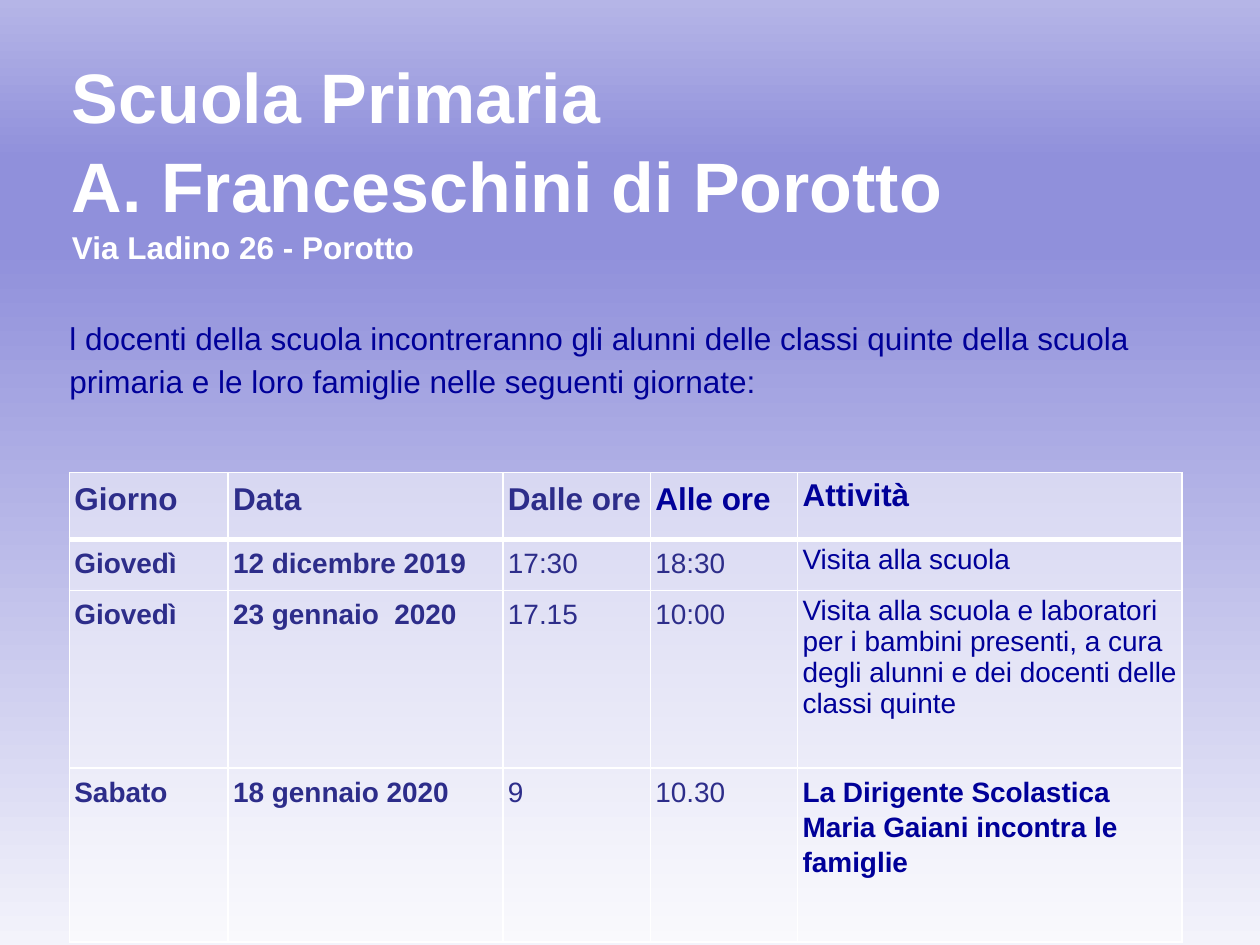
import pptx
import pptx.dml.color
import pptx.enum.text
import pptx.oxml
import pptx.oxml.ns
import pptx.util
from pptx.util import Cm

WHITE = pptx.dml.color.RGBColor(0xFF, 0xFF, 0xFF)
BLUE = pptx.dml.color.RGBColor(0x00, 0x00, 0x99)
INDIGO = pptx.dml.color.RGBColor(0x2D, 0x2D, 0x8A)
LAVENDER = pptx.dml.color.RGBColor(0x90, 0x90, 0xDB)
LILAC = pptx.dml.color.RGBColor(0xB5, 0xB5, 0xE7)
PALE = pptx.dml.color.RGBColor(0xF3, 0xF3, 0xFB)

FONT = "Arial"
NAMESPACE = pptx.oxml.ns.nsdecls("a")
BACKGROUND_STOPS = [(0, PALE), (74, LAVENDER), (83, LAVENDER), (100, LILAC)]

COLUMN_WIDTHS = [3.2, 5.54, 2.97, 2.97, 7.75]
ROW_HEIGHTS = [1.35, 1.02, 3.58, 3.51]
SCHEDULE = [
    ["Giorno", "Data", "Dalle ore", "Alle ore", "Attività"],
    ["Giovedì", "12 dicembre 2019", "17:30", "18:30", "Visita alla scuola"],
    ["Giovedì", "23 gennaio  2020", "17.15", "10:00",
     "Visita alla scuola e laboratori per i bambini presenti, a cura degli "
     "alunni e dei docenti delle classi quinte"],
    ["Sabato", "18 gennaio 2020", "9", "10.30",
     "La Dirigente Scolastica Maria Gaiani incontra le famiglie"],
]


def set_background(slide):
    """Fill the slide with a gradient that runs from bottom to top."""
    fill = slide.background.fill
    fill.gradient()
    fill.gradient_angle = 90
    stop_list = fill._fill._gradFill.find(pptx.oxml.ns.qn("a:gsLst"))
    for stop in list(stop_list):
        stop_list.remove(stop)
    for percent, color in BACKGROUND_STOPS:
        stop_list.append(pptx.oxml.parse_xml(
            f'<a:gs {NAMESPACE} pos="{percent * 1000}">'
            f'<a:srgbClr val="{color}"/></a:gs>'))


def write_text(paragraph, text, size=18, color=WHITE, bold=False,
               line_spacing=None, space_after=None):
    """Append text to a paragraph; each newline becomes a line break."""
    for index, line in enumerate(text.split("\n")):
        if index:
            paragraph.add_line_break()
        if line:
            run = paragraph.add_run()
            run.text = line
            run.font.name = FONT
            run.font.size = pptx.util.Pt(size)
            run.font.bold = bold
            run.font.color.rgb = color
    if line_spacing is not None:
        paragraph.line_spacing = line_spacing
    if space_after is not None:
        paragraph.space_after = pptx.util.Pt(space_after)


def add_text_box(slide, left, top, width, height):
    """Add a wrapping, vertically centred box and return its text frame."""
    shape = slide.shapes.add_textbox(Cm(left), Cm(top), Cm(width), Cm(height))
    frame = shape.text_frame
    frame.word_wrap = True
    frame.vertical_anchor = pptx.enum.text.MSO_ANCHOR.MIDDLE
    return frame


def style_cell(cell, top_border, bottom_border):
    """Give a cell small margins, a half-transparent fill and white borders."""
    cell.margin_left = cell.margin_right = Cm(0.1)
    cell.margin_top = cell.margin_bottom = Cm(0.1)
    cell.fill.solid()
    cell.fill.fore_color.rgb = WHITE
    properties = cell._tc.get_or_add_tcPr()
    fill_color = next(properties.iter(pptx.oxml.ns.qn("a:srgbClr")))
    fill_color.append(
        pptx.oxml.parse_xml(f'<a:alpha {NAMESPACE} val="50000"/>'))
    borders = [("L", 1), ("R", 1), ("T", top_border), ("B", bottom_border)]
    for index, (side, width) in enumerate(borders):
        properties.insert(index, pptx.oxml.parse_xml(
            f'<a:ln{side} {NAMESPACE} w="{pptx.util.Pt(width)}"><a:solidFill>'
            f'<a:srgbClr val="{WHITE}"/></a:solidFill></a:ln{side}>'))


def add_schedule(slide, left, top):
    """Add the table of meetings."""
    table = slide.shapes.add_table(
        len(ROW_HEIGHTS), len(COLUMN_WIDTHS), Cm(left), Cm(top),
        Cm(sum(COLUMN_WIDTHS)), Cm(sum(ROW_HEIGHTS))).table
    table.horz_banding = False
    table.first_row = False
    for column, width in zip(table.columns, COLUMN_WIDTHS):
        column.width = Cm(width)
    for row, height in zip(table.rows, ROW_HEIGHTS):
        row.height = Cm(height)

    last_row = len(ROW_HEIGHTS) - 1
    for row_index, values in enumerate(SCHEDULE):
        header = row_index == 0
        for column_index, text in enumerate(values):
            activity = column_index == 4
            closing = activity and row_index == last_row
            blue = activity or (header and column_index == 3)
            spaced = closing or not activity
            cell = table.cell(row_index, column_index)
            style_cell(cell, top_border=3 if row_index == 1 else 1,
                       bottom_border=3 if header else 1)
            write_text(cell.text_frame.paragraphs[0], text,
                       size=18 if header else 16,
                       color=BLUE if blue else INDIGO,
                       bold=header or column_index < 2 or closing,
                       line_spacing=1.13 if spaced else None,
                       space_after=9 if spaced else None)


def main():
    presentation = pptx.Presentation()
    presentation.slide_width = Cm(25.4)
    presentation.slide_height = Cm(19.05)
    slide = presentation.slides.add_slide(presentation.slide_layouts[6])
    set_background(slide)

    # School name and address
    title = add_text_box(slide, 1.2, 1.2, 22.86, 3.96).paragraphs[0]
    write_text(title, "Scuola Primaria\nA. Franceschini di Porotto\n",
               size=40, bold=True)
    write_text(title, "Via Ladino 26 - Porotto", bold=True, line_spacing=1.05)

    # Invitation
    invitation = add_text_box(slide, 1.4, 6.35, 22.43, 1.68)
    invitation.margin_left = invitation.margin_right = 0
    invitation.margin_top = invitation.margin_bottom = 0
    write_text(invitation.paragraphs[0],
               "l docenti della scuola incontreranno gli alunni delle classi "
               "quinte della scuola primaria e le loro famiglie nelle "
               "seguenti giornate:", color=BLUE, line_spacing=1.14)

    # Meetings
    add_schedule(slide, 1.4, 9.53)

    presentation.save("out.pptx")


if __name__ == "__main__":
    main()
